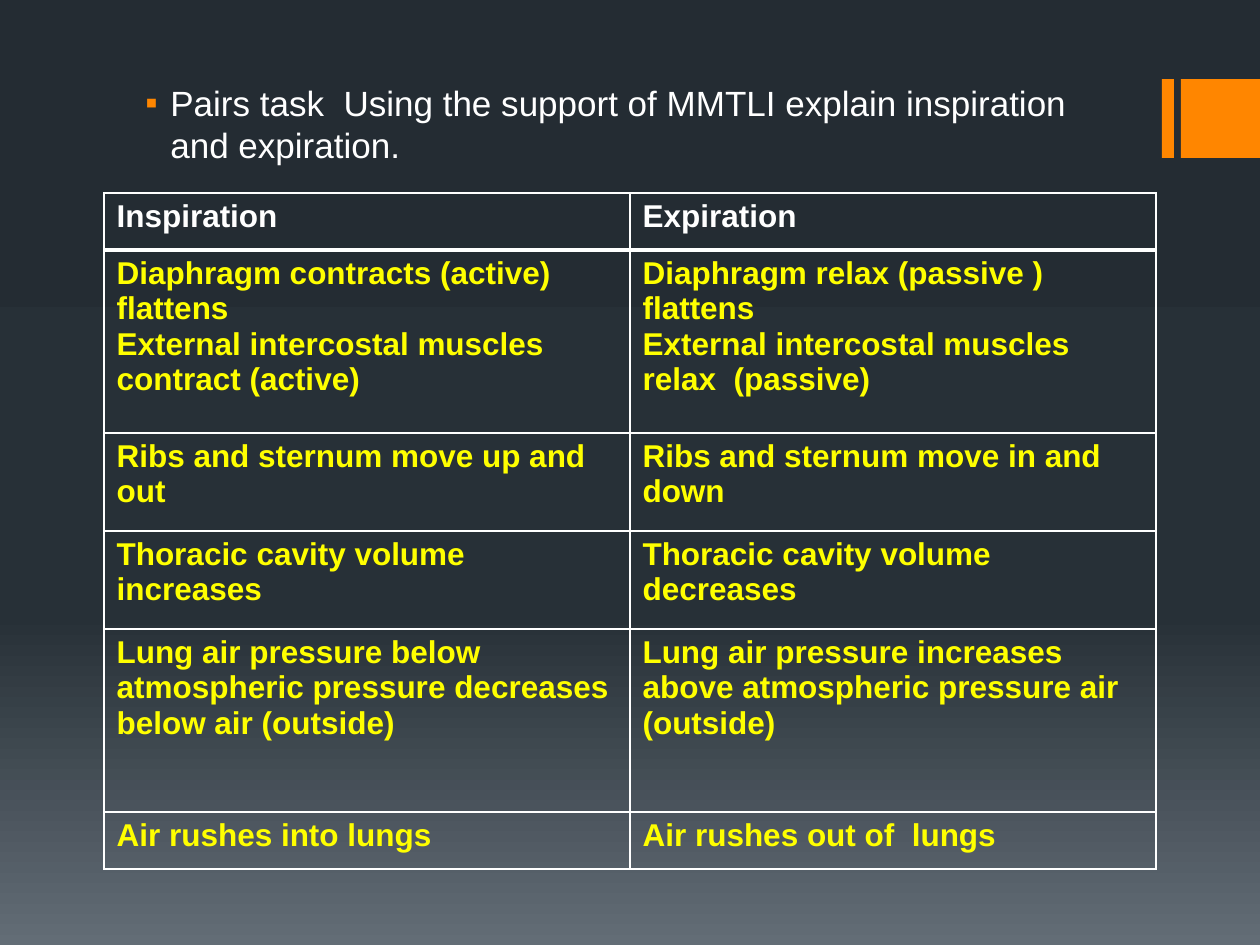
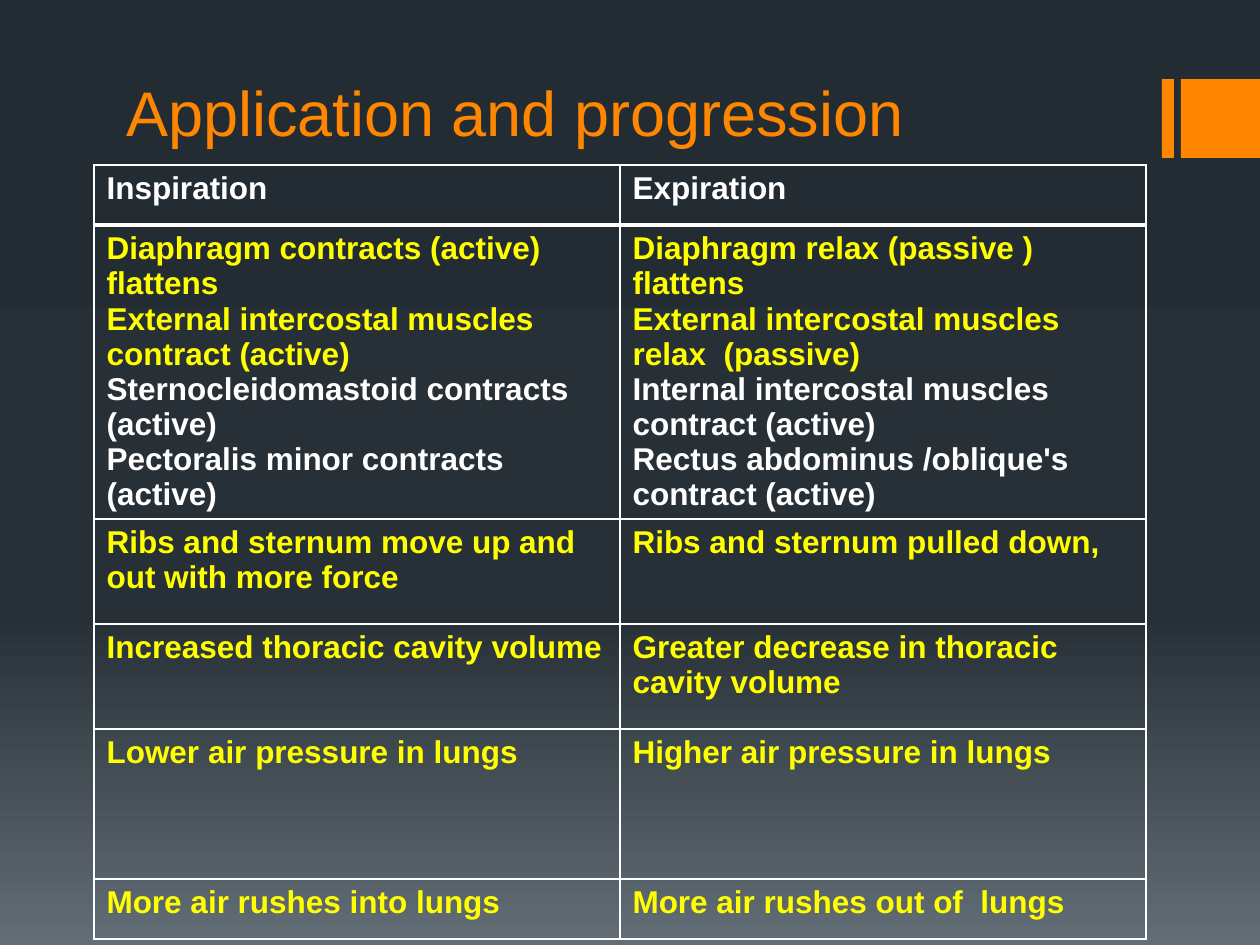
from dataclasses import dataclass

from lxml import etree
from pptx import Presentation
from pptx.dml.color import RGBColor
from pptx.enum.shapes import MSO_SHAPE
from pptx.enum.text import MSO_ANCHOR
from pptx.oxml.ns import qn
from pptx.util import Emu, Pt

RECTANGLE = MSO_SHAPE.RECTANGLE
TOP, BOTTOM = MSO_ANCHOR.TOP, MSO_ANCHOR.BOTTOM

PX_PER_INCH = 126
FONT = "Arial"
ORANGE, WHITE, YELLOW = "FF8600", "FFFFFF", "FFFF00"
BACKGROUND_STOPS = [(0, "242C33"), (65, "273037"), (100, "636D76")]
COLUMN_WIDTH = 526
CELL_LINE_SPACING = Pt(20.1)  # fixed, so the tallest row keeps its height
THIN, THICK = 1, 3


@dataclass
class Box:
    left: int
    top: int
    width: int
    height: int


@dataclass
class Row:
    height: int
    inspiration: list[str]
    expiration: list[str]
    color: str = YELLOW
    plain_lines: int = 2  # lines after these are white


ACCENTS = [Box(1162, 79, 12, 79), Box(1181, 79, 79, 79)]


def px(length: int) -> Emu:
    return Emu(round(length * 914400 / PX_PER_INCH))


def rgb(color: str) -> RGBColor:
    return RGBColor.from_string(color)


def place(box: Box) -> tuple[Emu, Emu, Emu, Emu]:
    return px(box.left), px(box.top), px(box.width), px(box.height)


def style_paragraph(paragraph, size: int, color: str, bold: bool = False) -> None:
    for run in paragraph.runs:
        run.font.name = FONT
        run.font.size = Pt(size)
        run.font.bold = bold
        run.font.color.rgb = rgb(color)


# Shared slide frame: gradient and orange accents
def add_framed_slide(presentation):
    slide = presentation.slides.add_slide(presentation.slide_layouts[6])
    fill = slide.background.fill
    fill.gradient()
    fill.gradient_angle = 270
    stops = slide.element.find(".//" + qn("a:gsLst"))
    stops.clear()
    for percent, color in BACKGROUND_STOPS:
        stop = etree.SubElement(stops, qn("a:gs"), pos=str(percent * 1000))
        etree.SubElement(stop, qn("a:srgbClr"), val=color)
    for box in ACCENTS:
        accent = slide.shapes.add_shape(RECTANGLE, *place(box))
        accent.shadow.inherit = False
        accent.fill.solid()
        accent.fill.fore_color.rgb = rgb(ORANGE)
        accent.line.fill.background()
    return slide


def add_text(slide, box: Box, text: str, size: int, color: str, anchor=TOP):
    text_frame = slide.shapes.add_textbox(*place(box)).text_frame
    text_frame.word_wrap = True
    text_frame.vertical_anchor = anchor
    text_frame.text = text
    paragraph = text_frame.paragraphs[0]
    style_paragraph(paragraph, size, color)
    return paragraph


def add_bullet(paragraph, color: str) -> None:
    properties = paragraph._p.get_or_add_pPr()
    properties.set("marL", str(px(32)))
    properties.set("indent", str(px(-25)))
    bullet_color = etree.SubElement(properties, qn("a:buClr"))
    etree.SubElement(bullet_color, qn("a:srgbClr"), val=color)
    etree.SubElement(properties, qn("a:buFont"), typeface=FONT)
    etree.SubElement(properties, qn("a:buChar"), char="▪")


# Comparison table
def set_borders(cell, top: int, bottom: int) -> None:
    properties = cell._tc.get_or_add_tcPr()
    for side, width in (("L", THIN), ("R", THIN), ("T", top), ("B", bottom)):
        line = etree.SubElement(properties, qn(f"a:ln{side}"), w=str(Pt(width)))
        solid = etree.SubElement(line, qn("a:solidFill"))
        etree.SubElement(solid, qn("a:srgbClr"), val=WHITE)


def add_comparison(slide, left: int, top: int, rows: list[Row]) -> None:
    box = Box(left, top, 2 * COLUMN_WIDTH, sum(row.height for row in rows))
    table = slide.shapes.add_table(len(rows), 2, *place(box)).table
    table.first_row = False
    table.horz_banding = False
    for column in table.columns:
        column.width = px(COLUMN_WIDTH)
    for row_index, row in enumerate(rows):
        table.rows[row_index].height = px(row.height)
        for column_index, lines in enumerate((row.inspiration, row.expiration)):
            cell = table.cell(row_index, column_index)
            set_borders(cell, THICK if row_index == 1 else THIN,
                        THICK if row_index == 0 else THIN)
            cell.fill.background()
            cell.text_frame.text = "\n".join(lines)
            for line_index, paragraph in enumerate(cell.text_frame.paragraphs):
                color = row.color if line_index < row.plain_lines else WHITE
                paragraph.line_spacing = CELL_LINE_SPACING
                style_paragraph(paragraph, 18, color, bold=True)


def header(height: int) -> Row:
    return Row(height, ["Inspiration"], ["Expiration"], WHITE)


INSPIRATION_MUSCLES = ["Diaphragm contracts (active)  flattens",
                       "External intercostal muscles contract (active)"]
EXPIRATION_MUSCLES = ["Diaphragm relax (passive )  flattens",
                      "External intercostal muscles relax  (passive)"]

REST_ROWS = [
    header(57),
    Row(183, INSPIRATION_MUSCLES, EXPIRATION_MUSCLES),
    Row(98, ["Ribs and sternum move up and out"],
        ["Ribs and sternum move in and down"]),
    Row(98, ["Thoracic cavity volume increases"],
        ["Thoracic cavity volume decreases"]),
    Row(183,
        ["Lung air pressure below atmospheric pressure decreases below air (outside)"],
        ["Lung air pressure increases above atmospheric pressure air (outside)"]),
    Row(57, ["Air rushes into lungs"], ["Air rushes out of  lungs"]),
]

EXERCISE_ROWS = [
    header(60),
    Row(294,
        INSPIRATION_MUSCLES + ["Sternocleidomastoid contracts (active)",
                               "Pectoralis minor contracts (active)"],
        EXPIRATION_MUSCLES + ["Internal intercostal muscles contract (active)",
                              "Rectus abdominus /oblique's contract (active)"]),
    Row(105, ["Ribs and sternum move up and out with more force"],
        ["Ribs and sternum pulled down,"]),
    Row(105, ["Increased thoracic cavity volume"],
        ["Greater decrease in thoracic cavity volume"]),
    Row(150, ["Lower air pressure in lungs"], ["Higher air pressure in lungs"]),
    Row(60, ["More air rushes into lungs"], ["More air rushes out of  lungs"]),
]


def main() -> None:
    presentation = Presentation()
    presentation.slide_width = px(1260)
    presentation.slide_height = px(945)

    # Slide 1: pairs task
    slide = add_framed_slide(presentation)
    task = add_text(
        slide, Box(126, 75, 1008, 794),
        "Pairs task  Using the support of MMTLI explain inspiration and expiration.",
        20, WHITE)
    add_bullet(task, ORANGE)
    add_comparison(slide, 104, 193, REST_ROWS)

    # Slide 2: application and progression
    slide = add_framed_slide(presentation)
    add_text(slide, Box(114, 66, 1008, 89), "Application and progression",
             36, ORANGE, BOTTOM)
    add_comparison(slide, 94, 165, EXERCISE_ROWS)

    presentation.save("out.pptx")


if __name__ == "__main__":
    main()
